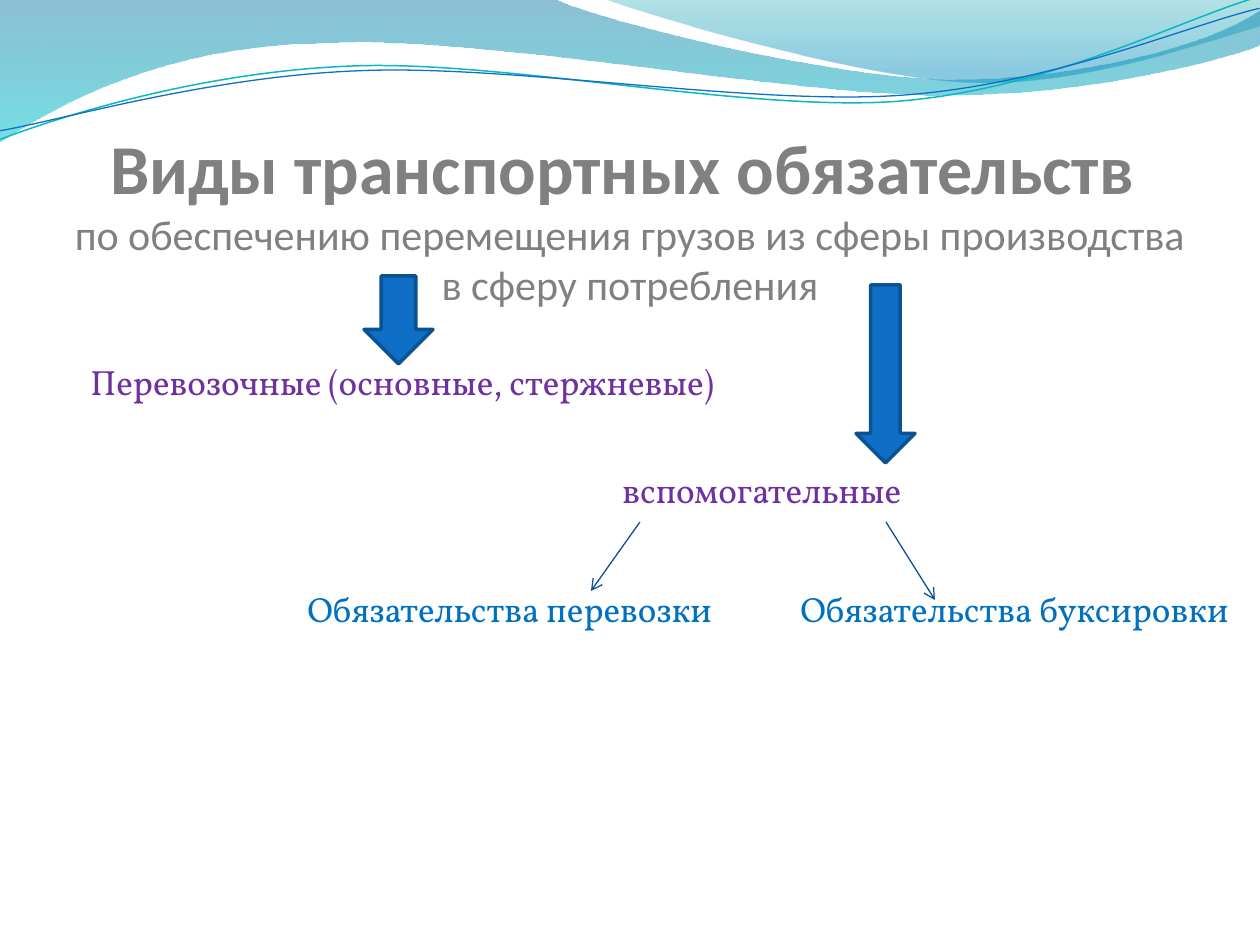
from lxml import etree
from pptx import Presentation, util as u
from pptx.dml.color import RGBColor
from pptx.enum import shapes, text
from pptx.oxml.ns import qn

PX = 914400 / 126


def px(*lengths):
    return [u.Emu(round(length * PX)) for length in lengths]


def color(hex_code):
    return RGBColor.from_string(hex_code)


deck = Presentation()
deck.slide_width, deck.slide_height = px(1260, 945)
page = deck.slides.add_slide(deck.slide_layouts[6])

# Each segment holds one end point (line) or two controls and an end (curve).
# Columns: start, segments, gradient stops (position, colour, opacity), line.
waves = [
    ((0, 0),
     [[(554, -1)],
      [(600, 21), (837, 79), (955, 79)],
      [(1075, 79), (1207, 47), (1260, 11)],
      [(1261, 45)],
      [(1239, 55), (1096, 96), (940, 95)],
      [(784, 95), (481, 35), (324, 43)],
      [(163, 45), (58, 105), (-1, 142)]],
     [(0, "0074A1", 45), (1, "00C6CF", 55)], None),
    ((604, -1),
     [[(641, 14), (859, 78), (969, 82)],
      [(1079, 87), (1211, 40), (1260, 26)],
      [(1260, 0)]],
     [(0, "00A1A9", 30), (0.8, "008BBF", 45)], None),
    ((-3, 110),
     [[(58, 90), (199, 52), (350, 53)],
      [(499, 53), (745, 118), (896, 114)],
      [(1049, 109), (1184, 45), (1260, 27)]],
     None, ("0AB8BF", 0.85)),
    ((-2, 101),
     [[(57, 94), (207, 57), (357, 58)],
      [(509, 58), (750, 112), (902, 108)],
      [(1052, 104), (1188, 52), (1262, 38)]],
     None, ("0F6FC6", 0.75)),
]
for start, segments, stops, stroke in waves:
    builder = page.shapes.build_freeform(*start, scale=PX)
    builder.add_line_segments(sum(segments, []), close=stops is not None)
    wave = builder.convert_to_shape()
    wave.shadow.inherit = False

    # Join the three points of each curve into one Bézier command.
    lines = iter(list(wave._element.iter(qn("a:lnTo"))))
    for segment in segments:
        commands = [next(lines) for _ in segment]
        if len(segment) == 3:
            curve = etree.Element(qn("a:cubicBezTo"))
            commands[0].addprevious(curve)
            for command in commands:
                curve.append(command[0])
                command.getparent().remove(command)

    if stops:
        wave.line.fill.background()
        wave.fill.gradient()
        wave.fill.gradient_angle = 270
        for stop, (position, hex_code, opacity) in zip(wave.fill.gradient_stops, stops):
            stop.position = position
            stop.color.rgb = color(hex_code)
        for node, (_, _, opacity) in zip(wave._element.spPr.iter(qn("a:srgbClr")), stops):
            etree.SubElement(node, qn("a:alpha"), val=str(opacity * 1000))
    else:
        wave.rotation = 357.3
        wave.fill.background()
        wave.line.color.rgb = color(stroke[0])
        wave.line.width = u.Pt(stroke[1])


def add_span(para, words, size, font, hex_code, bold=False):
    span = para.add_run()
    span.text = words
    span.font.size = u.Pt(size)
    span.font.name = font
    span.font.bold = bold
    span.font.color.rgb = color(hex_code)


title = page.shapes.add_textbox(*px(63, 97, 1134, 296)).text_frame
title.word_wrap = True
title.vertical_anchor = text.MSO_ANCHOR.BOTTOM
title.margin_left, title.margin_top, title.margin_right, title.margin_bottom = px(0, 6, 0, 84)
para = title.paragraphs[0]
para.alignment = text.PP_ALIGN.CENTER
add_span(para, "Виды транспортных обязательств ", 40, "Calibri", "808080", True)
para.add_line_break()
add_span(para, "по обеспечению перемещения грузов из сферы производства в сферу потребления",
         24, "Calibri", "808080")

labels = [
    (78, 354, 738, "Перевозочные (основные, стержневые)", "7030A0"),
    (610, 462, 452, "вспомогательные", "7030A0"),
    (295, 581, 444, "Обязательства перевозки", "0070C0"),
    (788, 581, 472, "Обязательства буксировки", "0070C0"),
]
for left, top, width, words, hex_code in labels:
    box = page.shapes.add_textbox(*px(left, top, width, 55)).text_frame
    box.word_wrap = True
    add_span(box.paragraphs[0], words, 20, "Vollkorn", hex_code)

for bounds in [(364, 276, 69, 88), (856, 285, 59, 178)]:
    arrow = page.shapes.add_shape(shapes.MSO_SHAPE.DOWN_ARROW, *px(*bounds))
    arrow.shadow.inherit = False
    arrow.fill.solid()
    arrow.fill.fore_color.rgb = color("0F6FC6")
    arrow.line.color.rgb = color("0B5292")
    arrow.line.width = u.Pt(2)

for ends in [(640, 522, 591, 591), (886, 522, 935, 600)]:
    branch = page.shapes.add_connector(shapes.MSO_CONNECTOR.STRAIGHT, *px(*ends))
    branch.line.color.rgb = color("095295")
    branch.line.width = u.Pt(0.75)
    etree.SubElement(branch.line._get_or_add_ln(), qn("a:tailEnd"), type="arrow")
    etree.SubElement(branch._element.spPr, qn("a:effectLst"))

deck.save("out.pptx")
